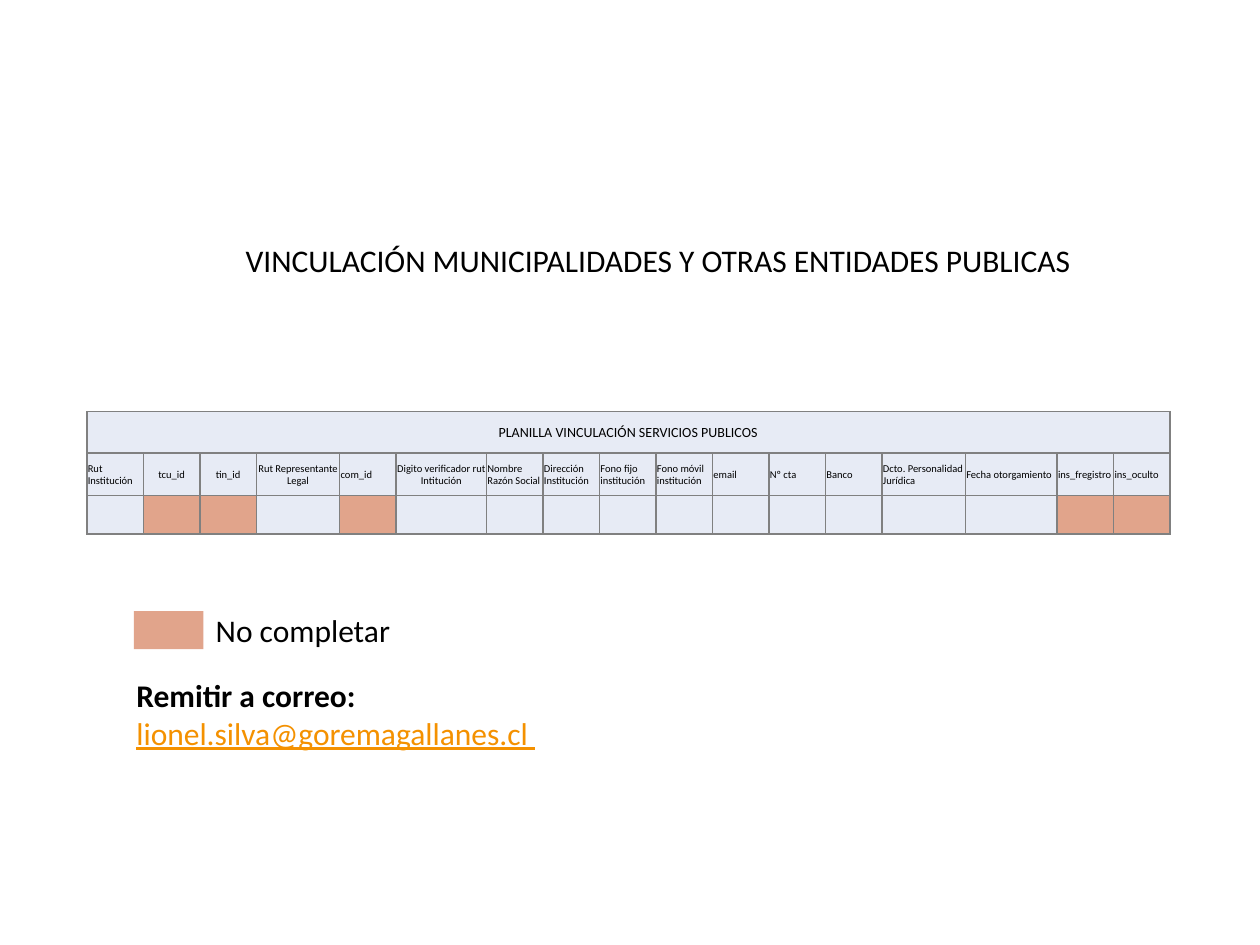
from dataclasses import dataclass

from lxml import etree
from pptx import Presentation
from pptx import util as u
from pptx.dml.color import RGBColor
from pptx.enum import shapes, text
from pptx.oxml.ns import qn

FONT = "Calibri"
BLACK, ORANGE, GRAY = "000000", "F49100", "808080"
PALE, SALMON = "E7EBF5", "E1A48B"
LEFT, CENTER = text.PP_ALIGN.LEFT, text.PP_ALIGN.CENTER
JUSTIFY = text.PP_ALIGN.JUSTIFY
NARROW = 1.14


@dataclass
class Run:
    text: str
    size: float = 18
    color: str = BLACK
    bold: bool = False
    underline: bool = False


@dataclass
class Column:
    label: str
    width: float = NARROW
    align: text.PP_ALIGN = LEFT
    skip: bool = False


COLUMNS = [
    Column("Rut Institución"),
    Column("tcu_id", align=CENTER, skip=True),
    Column("tin_id", align=CENTER, skip=True),
    Column("Rut Representante Legal", 1.68, CENTER),
    Column("com_id", skip=True),
    Column("Digito verificador rut Intitución", 1.82, CENTER),
    Column("Nombre Razón Social"),
    Column("Dirección Institución"),
    Column("Fono fijo institución"),
    Column("Fono móvil institución"),
    Column("email"),
    Column("Nº cta"),
    Column("Banco"),
    Column("Dcto. Personalidad Jurídica", 1.68),
    Column("Fecha otorgamiento", 1.85),
    Column("ins_fregistro", skip=True),
    Column("ins_oculto", skip=True),
]
ROW_HEIGHTS = [0.83, 0.86, 0.77]


def rgb(color: str) -> RGBColor:
    return RGBColor.from_string(color)


def add_run(p, run: Run) -> None:
    r = p.add_run()
    r.text = run.text
    r.font.name = FONT
    r.font.size = u.Pt(run.size)
    r.font.bold = run.bold
    r.font.underline = run.underline
    r.font.color.rgb = rgb(run.color)


def add_text(s, box: tuple, runs: list[Run], align=LEFT, wrap: bool = True) -> None:
    tf = s.shapes.add_textbox(*map(u.Cm, box)).text_frame
    tf.word_wrap = wrap
    tf.auto_size = text.MSO_AUTO_SIZE.SHAPE_TO_FIT_TEXT
    p = tf.paragraphs[0]
    p.alignment = align
    for run in runs:
        add_run(p, run)


def style_cell(cell, fill: str) -> None:
    cell.margin_left = cell.margin_right = cell.margin_top = u.Cm(0.02)
    cell.margin_bottom = 0
    cell.vertical_anchor = text.MSO_ANCHOR.MIDDLE
    tc_pr = cell._tc.get_or_add_tcPr()
    for side in ("lnL", "lnR", "lnT", "lnB"):
        ln = etree.SubElement(tc_pr, qn(f"a:{side}"), w=str(u.Pt(1)))
        solid = etree.SubElement(ln, qn("a:solidFill"))
        etree.SubElement(solid, qn("a:srgbClr"), val=GRAY)
    cell.fill.solid()
    cell.fill.fore_color.rgb = rgb(fill)


def fill_cell(cell, run: Run, align) -> None:
    p = cell.text_frame.paragraphs[0]
    p.alignment = align
    add_run(p, run)


def add_form(s, left: float, top: float) -> None:
    width = sum(c.width for c in COLUMNS)
    frame = s.shapes.add_table(
        len(ROW_HEIGHTS), len(COLUMNS),
        u.Cm(left), u.Cm(top), u.Cm(width), u.Cm(sum(ROW_HEIGHTS)),
    )
    table = frame.table
    table.first_row = table.horz_banding = False
    for row, height in zip(table.rows, ROW_HEIGHTS):
        row.height = u.Cm(height)
    for i, column in enumerate(COLUMNS):
        table.columns[i].width = u.Cm(column.width)
        title, header, entry = (table.cell(j, i) for j in range(3))
        style_cell(title, PALE)
        style_cell(header, PALE)
        style_cell(entry, SALMON if column.skip else PALE)
        fill_cell(header, Run(column.label, 6), column.align)
        p = entry.text_frame.paragraphs[0]
        etree.SubElement(p._p, qn("a:endParaRPr"), sz="600")
    table.cell(0, 0).merge(table.cell(0, len(COLUMNS) - 1))
    fill_cell(table.cell(0, 0), Run("PLANILLA VINCULACIÓN SERVICIOS PUBLICOS", 8), CENTER)


def add_swatch(s, box: tuple, color: str) -> None:
    sp = s.shapes.add_shape(shapes.MSO_SHAPE.RECTANGLE, *map(u.Cm, box))
    sp.shadow.inherit = False
    sp.fill.solid()
    sp.fill.fore_color.rgb = rgb(color)
    sp.line.fill.background()


def main() -> None:
    prs = Presentation()
    prs.slide_width, prs.slide_height = u.Cm(25.4), u.Cm(19.05)
    s = prs.slides.add_slide(prs.slide_layouts[6])
    add_text(s, (4.7, 4.73, 17.75, 1.02),
             [Run("VINCULACIÓN MUNICIPALIDADES Y OTRAS ENTIDADES PUBLICAS")], JUSTIFY)
    add_form(s, 1.75, 8.3)
    add_swatch(s, (2.7, 12.32, 1.4, 0.77), SALMON)
    add_text(s, (4.1, 12.2, 4.06, 1.02), [Run("No completar")], wrap=False)
    add_text(s, (2.5, 13.5, 12.7, 1.8), [
        Run("Remitir a correo: ", bold=True),
        Run("lionel.silva@goremagallanes.cl ", color=ORANGE, underline=True),
    ])
    prs.save("out.pptx")


if __name__ == "__main__":
    main()
